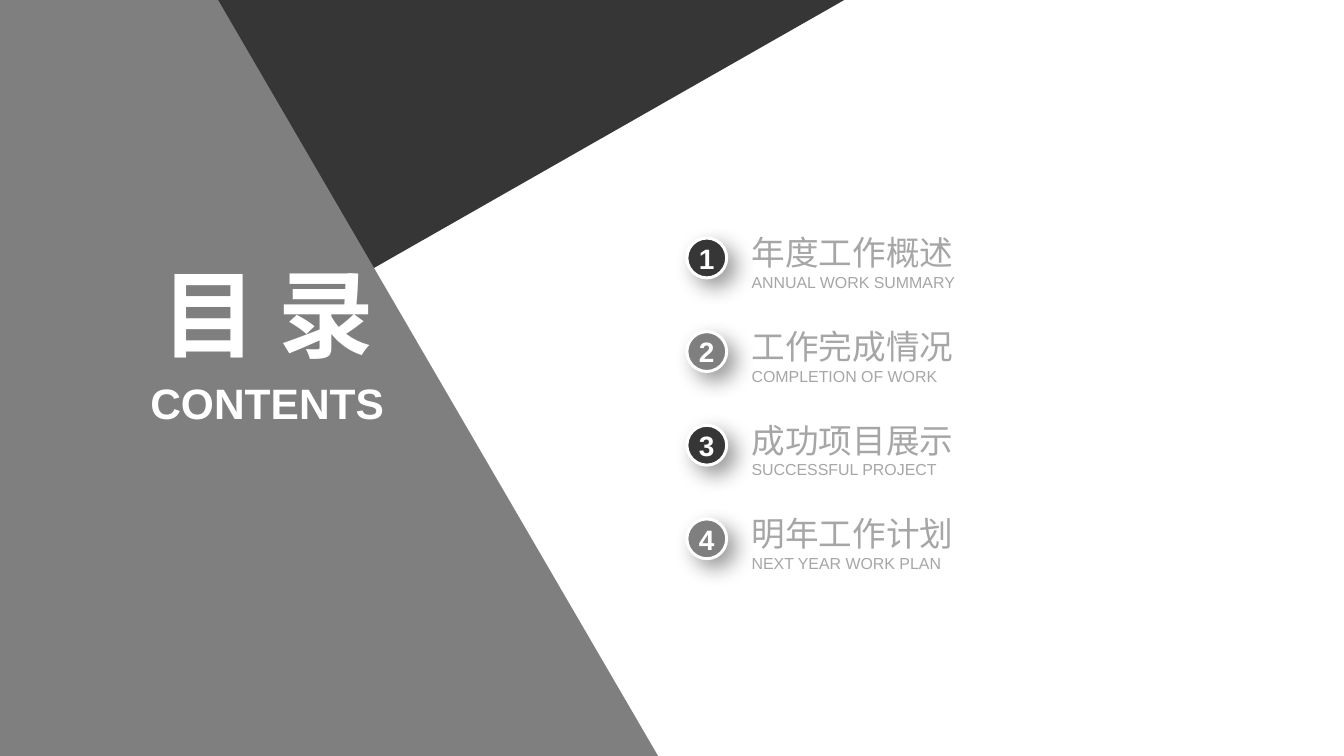
from lxml.etree import SubElement
from pptx import Presentation
from pptx.dml.color import RGBColor
from pptx.enum.shapes import MSO_SHAPE
from pptx.enum.text import MSO_ANCHOR, PP_ALIGN
from pptx.oxml.ns import qn
from pptx.util import Pt

PX = 9525
WIDTH, HEIGHT = 1350, 759
FONT = "Arial"
DARK = RGBColor(0x36, 0x36, 0x36)
GRAY = RGBColor(0x7F, 0x7F, 0x7F)
LIGHT_GRAY = RGBColor(0xA6, 0xA6, 0xA6)
WHITE = RGBColor(0xFF, 0xFF, 0xFF)

CHAPTERS = [
    ("年度工作概述", "ANNUAL WORK SUMMARY"),
    ("工作完成情况", "COMPLETION OF WORK"),
    ("成功项目展示", "SUCCESSFUL PROJECT"),
    ("明年工作计划", "NEXT YEAR WORK PLAN"),
]
CHAPTER_TOP, CHAPTER_PITCH = 233, 94


def px(*lengths):
    return [length * PX for length in lengths]


def write_text(paragraph, text, size, color, bold=False, align=PP_ALIGN.LEFT):
    paragraph.alignment = align
    run = paragraph.add_run()
    run.text = text
    run.font.name = FONT
    run.font.size = Pt(size)
    run.font.bold = bold
    run.font.color.rgb = color


def prepare_frame(shape, anchor=MSO_ANCHOR.MIDDLE):
    frame = shape.text_frame
    frame.margin_left = frame.margin_top = frame.margin_right = frame.margin_bottom = 0
    frame.word_wrap = True
    frame.vertical_anchor = anchor
    return frame


def add_text_box(slide, box, lines, anchor=MSO_ANCHOR.MIDDLE, **text_format):
    frame = prepare_frame(slide.shapes.add_textbox(*px(*box)), anchor)
    for index, (text, size) in enumerate(lines):
        paragraph = frame.add_paragraph() if index else frame.paragraphs[0]
        write_text(paragraph, text, size, **text_format)


def add_polygon(slide, points, color):
    builder = slide.shapes.build_freeform(*points[0], scale=PX)
    builder.add_line_segments(points[1:], close=True)
    shape = builder.convert_to_shape()
    shape.shadow.inherit = False
    shape.fill.solid()
    shape.fill.fore_color.rgb = color
    shape.line.fill.background()


def add_soft_shadow(shape):
    shape.shadow.inherit = False
    effects = shape._element.spPr.find(qn("a:effectLst"))
    shadow = SubElement(
        effects, qn("a:outerShdw"), blurRad=str(Pt(16)), dist=str(Pt(9)),
        dir="2700000", algn="tl", rotWithShape="0",
    )
    color = SubElement(shadow, qn("a:srgbClr"), val="000000")
    SubElement(color, qn("a:alpha"), val="40000")


def add_number_badge(slide, left, top, number, color):
    shape = slide.shapes.add_shape(MSO_SHAPE.OVAL, *px(left, top, 40, 40))
    add_soft_shadow(shape)
    shape.fill.solid()
    shape.fill.fore_color.rgb = color
    shape.line.color.rgb = WHITE
    shape.line.width = Pt(2.25)
    paragraph = prepare_frame(shape).paragraphs[0]
    write_text(paragraph, str(number), 21.1, WHITE, bold=True, align=PP_ALIGN.CENTER)


def add_chapter(slide, index, title, subtitle):
    top = CHAPTER_TOP + index * CHAPTER_PITCH
    add_number_badge(slide, 690, top + 6, index + 1, GRAY if index % 2 else DARK)
    add_text_box(slide, (755, top, 236, 60), [(title, 25.3), (subtitle, 12)],
                 color=LIGHT_GRAY)


def main():
    presentation = Presentation()
    presentation.slide_width, presentation.slide_height = px(WIDTH, HEIGHT)
    slide = presentation.slides.add_slide(presentation.slide_layouts[6])

    add_polygon(slide, [(0, 0), (848, 0), (0, 483)], DARK)
    add_polygon(slide, [(0, 0), (219, 0), (661, HEIGHT), (0, HEIGHT)], GRAY)

    for index, (title, subtitle) in enumerate(CHAPTERS):
        add_chapter(slide, index, title, subtitle)

    heading = {"color": WHITE, "bold": True, "align": PP_ALIGN.CENTER}
    add_text_box(slide, (131, 255, 276, 116), [("目 录", 72)], **heading)
    add_text_box(slide, (146, 379, 245, 52), [("CONTENTS", 32)],
                 anchor=MSO_ANCHOR.TOP, **heading)

    presentation.save("out.pptx")


if __name__ == "__main__":
    main()
